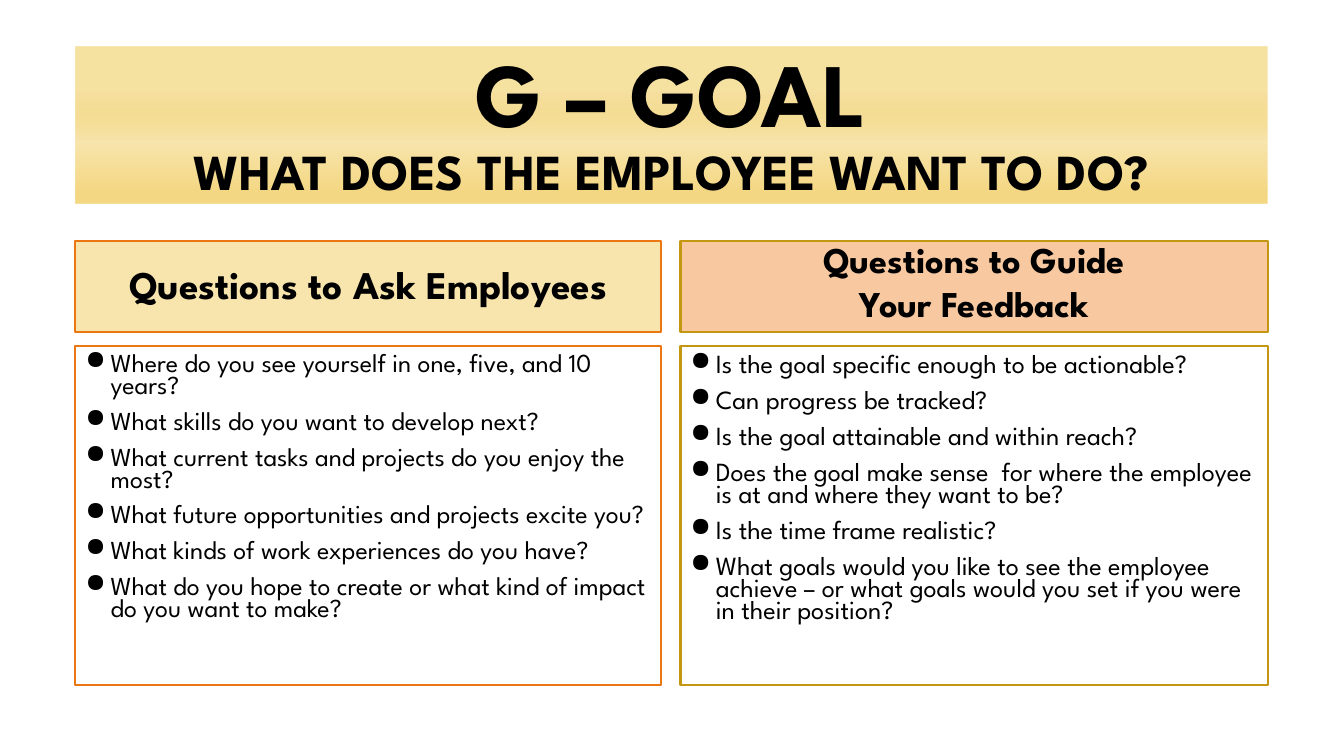
from lxml.etree import SubElement
from pptx import Presentation
from pptx.dml.color import RGBColor
from pptx.enum.shapes import MSO_SHAPE as Shape
from pptx.enum.text import MSO_ANCHOR as Anchor, PP_ALIGN as Align
from pptx.oxml.ns import qn
from pptx.util import Cm, Pt

BLACK = RGBColor(0x00, 0x00, 0x00)
GOLD = RGBColor(0xEC, 0xBD, 0x31)
CREAM = RGBColor(0xF7, 0xE5, 0xAD)
SAND = RGBColor(0xF4, 0xD7, 0x83)
PEACH = RGBColor(0xF8, 0xC9, 0xA0)
ORANGE = RGBColor(0xEB, 0x77, 0x12)
OCHRE = RGBColor(0xC4, 0x97, 0x12)

TITLE_STOPS = [(28, GOLD, 45), (60, CREAM, 100), (92, SAND, 100)]
HEADING_TOP, HEADING_HEIGHT = 6.07, 2.29
LIST_TOP, LIST_HEIGHT = 8.71, 8.56

COLUMNS = [
    dict(
        left=1.9, width=14.76, fill=CREAM, line=ORANGE,
        heading=["Questions to Ask Employees"],
        heading_size=28, heading_spacing=0.9, list_size=18.5,
        questions=[
            "Where do you see yourself in one, five, and 10 years?",
            "What skills do you want to develop next?",
            "What current tasks and projects do you enjoy the most?",
            "What future opportunities and projects excite you?",
            "What kinds of work experiences do you have?",
            "What do you hope to create or what kind of impact do you want to make?",
        ],
    ),
    dict(
        left=17.15, width=14.81, fill=PEACH, line=OCHRE,
        heading=["Questions to Guide", "Your Feedback"],
        heading_size=25.9, heading_spacing=0.7, list_size=18.7,
        questions=[
            "Is the goal specific enough to be actionable?",
            "Can progress be tracked?",
            "Is the goal attainable and within reach?",
            "Does the goal make sense  for where the employee is at and where they want to be?",
            "Is the time frame realistic?",
            "What goals would you like to see the employee achieve – or what goals "
            "would you set if you were in their position?",
        ],
    ),
]


def add_span(para, text, size, bold=False, color=BLACK, font="League Spartan"):
    span = para.add_run()
    span.text = text
    span.font.name = font
    span.font.size = Pt(size)
    span.font.bold = bold
    span.font.color.rgb = color


def add_bullet(para, indent):
    props = para._p.get_or_add_pPr()
    props.set("marL", str(indent))
    props.set("indent", str(-indent))
    SubElement(props, qn("a:buChar"), char="●")


def set_gradient(box, stops):
    box.fill.background()
    blank = box._element.spPr.find(qn("a:noFill"))
    gradient = blank.makeelement(qn("a:gradFill"), {"rotWithShape": "1"})
    stop_list = SubElement(gradient, qn("a:gsLst"))
    for position, color, opacity in stops:
        stop = SubElement(stop_list, qn("a:gs"), pos=str(position * 1000))
        shade = SubElement(stop, qn("a:srgbClr"), val=str(color))
        if opacity < 100:
            SubElement(shade, qn("a:alpha"), val=str(opacity * 1000))
    SubElement(gradient, qn("a:lin"), ang="5400000", scaled="0")
    blank.getparent().replace(blank, gradient)


class GoalSlide:
    def __init__(self, deck):
        self.page = deck.slides.add_slide(deck.slide_layouts[6])
        self.indent = Cm(0.64)
        self.gap = Pt(10)

    def panel(self, left, top, width, height, fill=None, line=None,
              anchor=Anchor.MIDDLE, inset_top=0.13):
        box = self.page.shapes.add_shape(
            Shape.RECTANGLE, Cm(left), Cm(top), Cm(width), Cm(height))
        box.shadow.inherit = False
        if fill is None:
            box.fill.background()
        else:
            box.fill.solid()
            box.fill.fore_color.rgb = fill
        if line is None:
            box.line.fill.background()
        else:
            box.line.color.rgb = line
            box.line.width = Pt(1.5)
        frame = box.text_frame
        frame.word_wrap = True
        frame.vertical_anchor = anchor
        frame.margin_left = frame.margin_right = Cm(0.25)
        frame.margin_top, frame.margin_bottom = Cm(inset_top), Cm(0.13)
        return box

    def paragraphs(self, box, texts, size, spacing, align, bold=False, bullets=False):
        for number, text in enumerate(texts):
            frame = box.text_frame
            para = frame.add_paragraph() if number else frame.paragraphs[0]
            para.alignment = align
            para.line_spacing = spacing
            para.space_before = self.gap if number else Pt(0)
            if bullets:
                add_bullet(para, self.indent)
            add_span(para, text, size, bold=bold)

    def title(self, headline, question):
        box = self.panel(1.9, 1.17, 30.05, 3.96)
        set_gradient(box, TITLE_STOPS)
        para = box.text_frame.paragraphs[0]
        para.alignment = Align.CENTER
        para.line_spacing = 0.9
        add_span(para, headline, 64.8, bold=True)
        para.add_line_break()
        add_span(para, question, 36, bold=True)

    def column(self, left, width, fill, line, heading, heading_size,
               heading_spacing, list_size, questions):
        header = self.panel(left, HEADING_TOP, width, HEADING_HEIGHT, fill, line)
        self.paragraphs(header, heading, heading_size, heading_spacing,
                        Align.CENTER, bold=True)
        body = self.panel(left, LIST_TOP, width, LIST_HEIGHT, line=line,
                          anchor=Anchor.TOP, inset_top=0.25)
        self.paragraphs(body, questions, list_size, 0.7, Align.LEFT, bullets=True)


def main():
    deck = Presentation()
    deck.slide_width, deck.slide_height = Cm(33.87), Cm(19.05)
    slide = GoalSlide(deck)
    slide.title("G – GOAL", "WHAT DOES THE EMPLOYEE WANT TO DO?")
    for column in COLUMNS:
        slide.column(**column)
    deck.save("out.pptx")


if __name__ == "__main__":
    main()
